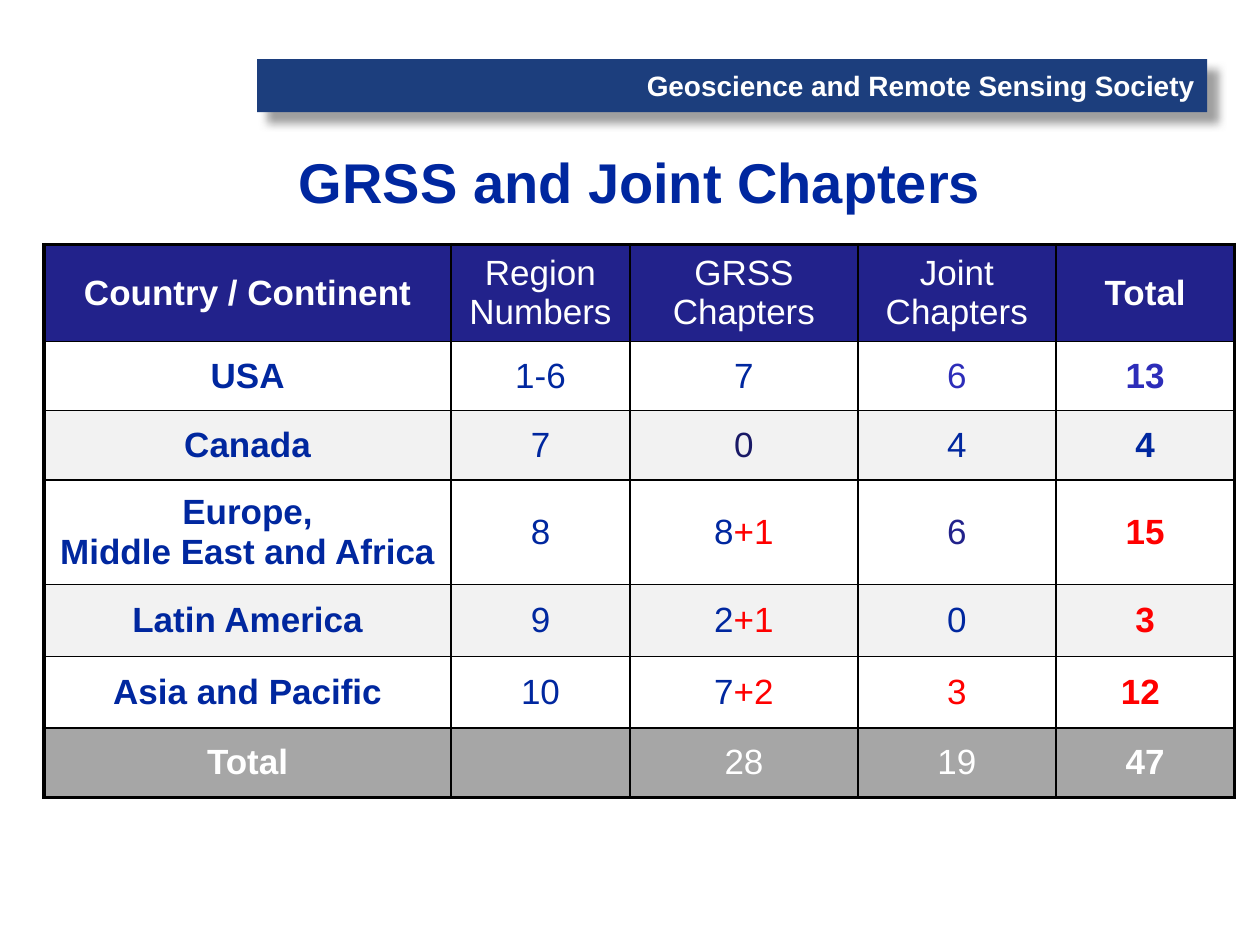
from lxml.etree import SubElement
from pptx import Presentation
from pptx.dml.color import RGBColor
from pptx.enum.shapes import MSO_SHAPE
from pptx.enum.text import MSO_ANCHOR, PP_ALIGN
from pptx.oxml.ns import qn
from pptx.util import Inches, Pt

COLORS = {
    "banner": "1C3E7D", "shadow": "808080", "header": "22228B",
    "band": "F2F2F2", "total": "A6A6A6", "border": "000000",
    "white": "FFFFFF", "blue": "00279F", "violet": "2D2DB9",
    "navy": "191966", "indigo": "22228B", "red": "FF0000",
}

# Content: a cell is plain text, or a list of (text, color) runs
SOCIETY = "Geoscience and Remote Sensing Society"
TITLE = "GRSS and Joint Chapters"
CHAPTERS = [
    ["Country / Continent", "Region\nNumbers", "GRSS\nChapters", "Joint\nChapters", "Total"],
    ["USA", "1-6", "7", [("6", "violet")], [("13", "violet")]],
    ["Canada", "7", [("0", "navy")], "4", "4"],
    ["Europe,\nMiddle East and Africa", "8", [("8", "blue"), ("+1", "red")],
     [("6", "indigo")], [("15", "red")]],
    ["Latin America", "9", [("2", "blue"), ("+1", "red")], "0", [("3", "red")]],
    ["Asia and Pacific", "10", [("7", "blue"), ("+2", "red")],
     [("3", "red")], [("12 ", "red")]],
    ["Total", "", "28", "19", "47"],
]
COLUMN_WIDTHS = [3.23, 1.42, 1.81, 1.57, 1.42]
ROW_HEIGHTS = [0.77, 0.55, 0.55, 0.83, 0.57, 0.57, 0.55]
ROW_FILLS = ["header", None, "band", None, "band", None, "total"]
LAST_ROW, LAST_COLUMN = len(ROW_HEIGHTS) - 1, len(COLUMN_WIDTHS) - 1


def color(name):
    return RGBColor.from_string(COLORS[name])


def style(paragraph, size, ink, bold, align=PP_ALIGN.CENTER):
    paragraph.alignment = align
    font = paragraph.font
    font.name, font.size, font.bold = "Arial", Pt(size), bold
    if ink:
        font.color.rgb = color(ink)


def add_shadow(shape):
    effects = SubElement(shape._element.spPr, qn("a:effectLst"))
    shadow = SubElement(effects, qn("a:outerShdw"), blurRad=str(Pt(5)),
                        dist=str(Pt(8.5)), dir=str(45 * 60000),
                        algn="tl", rotWithShape="0")
    tint = SubElement(shadow, qn("a:srgbClr"), val=COLORS["shadow"])
    SubElement(tint, qn("a:alpha"), val="75000")


def add_borders(cell, outer_sides):
    properties = cell._tc.get_or_add_tcPr()
    for side in "LRTB":
        width = Pt(2.25 if side in outer_sides else 1)
        line = SubElement(properties, qn(f"a:ln{side}"), w=str(width))
        fill = SubElement(line, qn("a:solidFill"))
        SubElement(fill, qn("a:srgbClr"), val=COLORS["border"])


def outer_sides(row, column):
    edges = {"L": column == 0, "R": column == LAST_COLUMN,
             "T": row == 0, "B": row == LAST_ROW}
    return [side for side, is_outer in edges.items() if is_outer]


def fill_cell(cell, content, row, column):
    bold = column in (0, LAST_COLUMN)
    cell.vertical_anchor = MSO_ANCHOR.MIDDLE
    if isinstance(content, str):
        cell.text = content
        ink = "white" if row in (0, LAST_ROW) else "blue"
    else:
        ink = None
        for text, run_ink in content:
            run = cell.text_frame.paragraphs[0].add_run()
            run.text = text
            run.font.color.rgb = color(run_ink)
    for paragraph in cell.text_frame.paragraphs:
        style(paragraph, 20, ink, bold)

    add_borders(cell, outer_sides(row, column))
    if ROW_FILLS[row]:
        cell.fill.solid()
        cell.fill.fore_color.rgb = color(ROW_FILLS[row])
    else:
        cell.fill.background()


presentation = Presentation()
presentation.slide_width, presentation.slide_height = Inches(10), Inches(7.5)
slide = presentation.slides.add_slide(presentation.slide_layouts[6])

# Society banner
banner = slide.shapes.add_shape(MSO_SHAPE.RECTANGLE, Inches(2.04), Inches(0.47),
                                Inches(7.54), Inches(0.42))
banner.fill.solid()
banner.fill.fore_color.rgb = color("banner")
banner.line.fill.background()
add_shadow(banner)
banner.text_frame.text = SOCIETY
banner.text_frame.word_wrap = False
banner.text_frame.vertical_anchor = MSO_ANCHOR.MIDDLE
style(banner.text_frame.paragraphs[0], 16, "white", True, PP_ALIGN.RIGHT)

# Chapter table
table = slide.shapes.add_table(
    len(ROW_HEIGHTS), len(COLUMN_WIDTHS), Inches(0.35), Inches(1.94),
    Inches(sum(COLUMN_WIDTHS)), Inches(sum(ROW_HEIGHTS))).table
for table_column, width in zip(table.columns, COLUMN_WIDTHS):
    table_column.width = Inches(width)
for table_row, height in zip(table.rows, ROW_HEIGHTS):
    table_row.height = Inches(height)
for row, contents in enumerate(CHAPTERS):
    for column, content in enumerate(contents):
        fill_cell(table.cell(row, column), content, row, column)

# Title
title = slide.shapes.add_textbox(Inches(0.83), Inches(0.94), Inches(8.5), Inches(1))
title.text_frame.text = TITLE
title.text_frame.word_wrap = True
title.text_frame.vertical_anchor = MSO_ANCHOR.MIDDLE
style(title.text_frame.paragraphs[0], 32, "blue", True)

presentation.save("out.pptx")
